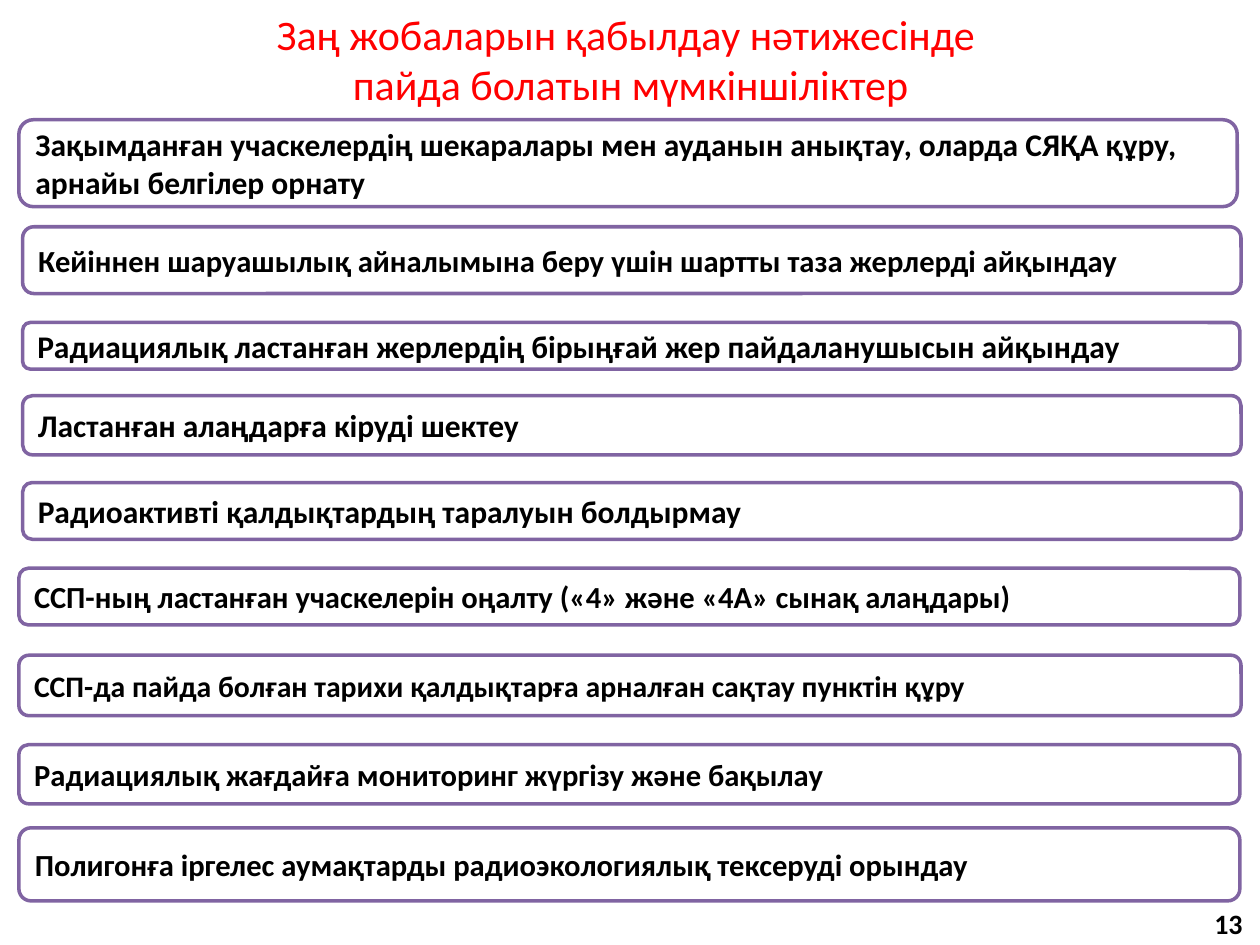
from pptx import Presentation
from pptx.dml.color import RGBColor
from pptx.enum.shapes import MSO_SHAPE as Shape
from pptx.enum.text import MSO_ANCHOR as Anchor, PP_ALIGN as Align
from pptx.util import Inches, Pt

FONT = "Calibri"
RED, PURPLE, BLACK, WHITE = "FF0000", "8064A2", "000000", "FFFFFF"
TITLE = "Заң жобаларын қабылдау нәтижесінде \vпайда болатын мүмкіншіліктер"

# left, top, width, height (inches), font size (points), lines of text
OPPORTUNITIES = [
    (0.15, 0.95, 9.67, 0.69, 18,
     ["Зақымданған учаскелердің шекаралары мен ауданын анықтау, оларда СЯҚА құру,",
      "арнайы белгілер орнату"]),
    (0.18, 1.80, 9.67, 0.53, 17.5,
     ["Кейіннен шаруашылық айналымына беру үшін шартты таза жерлерді айқындау"]),
    (0.18, 2.56, 9.66, 0.37, 18,
     ["Радиациялық ластанған жерлердің бірыңғай жер пайдаланушысын айқындау"]),
    (0.18, 3.14, 9.67, 0.47, 18, ["Ластанған алаңдарға кіруді шектеу"]),
    (0.18, 3.83, 9.67, 0.45, 18, ["Радиоактивті қалдықтардың таралуын болдырмау"]),
    (0.15, 4.51, 9.69, 0.45, 17.5,
     ["ССП-ның ластанған учаскелерін оңалту («4» және «4А» сынақ алаңдары)"]),
    (0.15, 5.20, 9.70, 0.48, 17,
     ["ССП-да пайда болған тарихи қалдықтарға арналған сақтау пунктін құру"]),
    (0.15, 5.91, 9.69, 0.47, 17.5,
     ["Радиациялық жағдайға мониторинг жүргізу және бақылау"]),
    (0.15, 6.57, 9.69, 0.58, 17.5,
     ["Полигонға іргелес аумақтарды радиоэкологиялық тексеруді орындау"]),
]


def color(value):
    return RGBColor.from_string(value)


def write(shape, lines, size, ink=BLACK, bold=True, align=Align.LEFT):
    """Fill a shape with one paragraph per line, centred vertically."""
    frame = shape.text_frame
    frame.word_wrap = True
    frame.vertical_anchor = Anchor.MIDDLE
    frame.text = "\n".join(lines)
    for para in frame.paragraphs:
        para.alignment = align
        para.font.name = FONT
        para.font.size = Pt(size)
        para.font.bold = bold
        para.font.color.rgb = color(ink)


def add_title(page):
    title = page.shapes.title
    title.left, title.top = Inches(0.28), Inches(0.12)
    title.width, title.height = Inches(9.45), Inches(0.69)
    write(title, [TITLE], 24, RED, False, Align.CENTER)


def add_opportunity(page, left, top, width, height, size, lines):
    box = page.shapes.add_shape(Shape.ROUNDED_RECTANGLE,
                                *map(Inches, (left, top, width, height)))
    box.shadow.inherit = False
    box.fill.solid()
    box.fill.fore_color.rgb = color(WHITE)
    box.line.color.rgb = color(PURPLE)
    box.line.width = Pt(2)
    write(box, lines, size)


def add_page_number(page, number):
    box = page.shapes.add_textbox(*map(Inches, (9.48, 7.13, 0.48, 0.4)))
    write(box, [number], 16, align=Align.RIGHT)


def main():
    deck = Presentation()
    deck.slide_width, deck.slide_height = Inches(10), Inches(7.5)
    page = deck.slides.add_slide(deck.slide_layouts[5])
    add_title(page)
    for opportunity in OPPORTUNITIES:
        add_opportunity(page, *opportunity)
    add_page_number(page, "13")
    deck.save("out.pptx")


if __name__ == "__main__":
    main()
